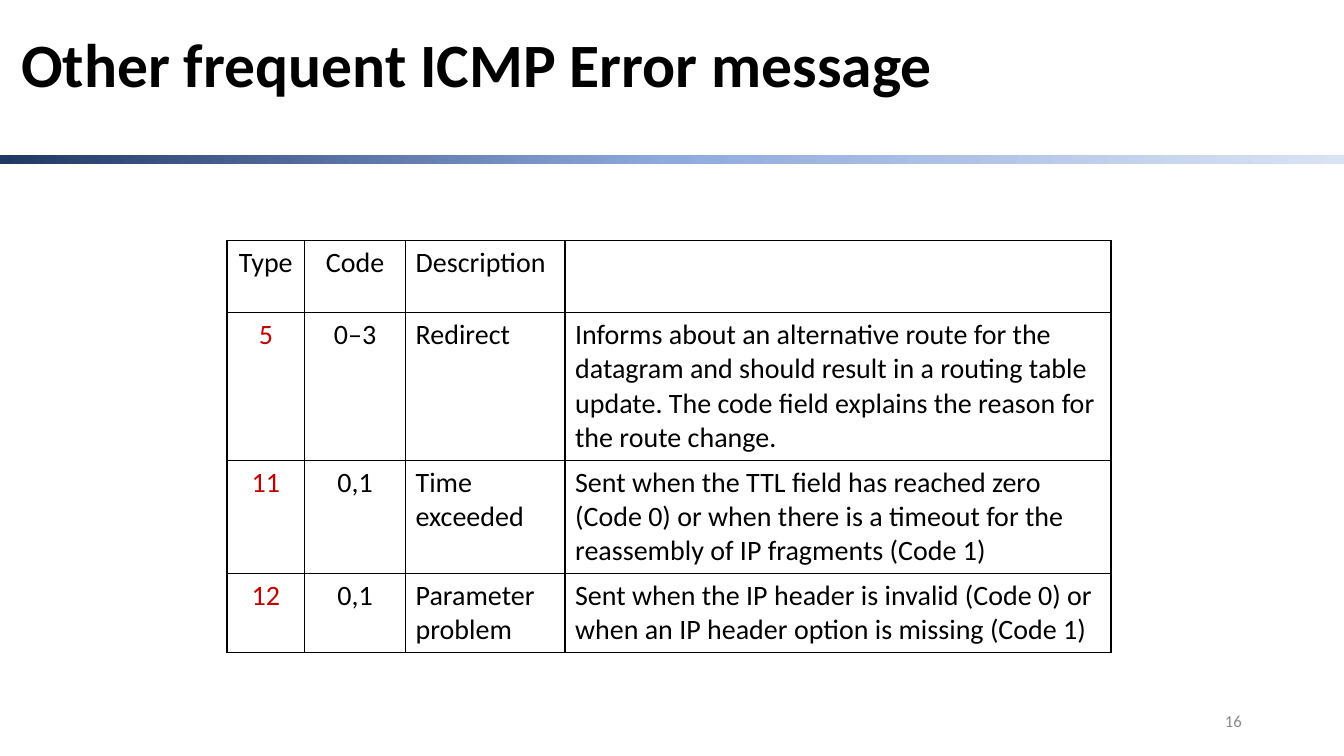
from copy import deepcopy

from lxml import etree
from pptx import Presentation, util as u
from pptx.dml.color import RGBColor
from pptx.enum import shapes, text
from pptx.oxml import ns

COLORS = {
    "ink": "000000", "type": "C00000", "number": "8C8C8C",
    "navy": "203864", "blue": "8FAADC", "pale": "DAE3F3",
}
CENTER, LEFT, RIGHT = text.PP_ALIGN.CENTER, text.PP_ALIGN.LEFT, text.PP_ALIGN.RIGHT

COLUMN_WIDTHS = [1.96, 2.54, 4.02, 13.76]
ROW_HEIGHTS = [1.82, 3.72, 2.85, 1.98]
MESSAGES = [
    ("Type", "Code", "Description", ""),
    ("5", "0–3", "Redirect",
     "Informs about an alternative route for the datagram and should result in a "
     "routing table update. The code field explains the reason for the route change."),
    ("11", "0,1", "Time exceeded",
     "Sent when the TTL field has reached zero (Code 0) or when there is a timeout "
     "for the reassembly of IP fragments (Code 1)"),
    ("12", "0,1", "Parameter\nproblem",
     "Sent when the IP header is invalid (Code 0) or when an IP header option is "
     "missing (Code 1)"),
]


class SlideBuilder:
    font = "Calibri"

    def __init__(self, deck):
        self.page = deck.slides.add_slide(deck.slide_layouts[5])

    def set_text(self, para, words, size, color="ink", align=LEFT, bold=False):
        para.text = words
        para.alignment = align
        for span in para.runs:
            span.font.name = self.font
            span.font.size = u.Pt(size)
            span.font.bold = bold
            span.font.color.rgb = RGBColor.from_string(COLORS[color])

    def title(self, words, left, top, width, height):
        box = self.page.shapes.title
        box.left, box.top = u.Cm(left), u.Cm(top)
        box.width, box.height = u.Cm(width), u.Cm(height)
        box.text_frame.vertical_anchor = text.MSO_ANCHOR.MIDDLE
        para = box.text_frame.paragraphs[0]
        self.set_text(para, words, 44, bold=True)
        para.line_spacing = 0.9

    def label(self, words, size, color, align, *area):
        box = self.page.shapes.add_textbox(*map(u.Cm, area))
        box.text_frame.word_wrap = True
        box.text_frame.vertical_anchor = text.MSO_ANCHOR.MIDDLE
        self.set_text(box.text_frame.paragraphs[0], words, size, color, align)

    def gradient_bar(self, colors, *area):
        bar = self.page.shapes.add_shape(
            shapes.MSO_SHAPE.RECTANGLE, *map(u.Cm, area))
        bar.shadow.inherit = False
        bar.line.fill.background()
        bar.fill.gradient()
        bar.fill.gradient_angle = 0
        # A new gradient has two stops; extend it to one per colour
        stop_list = bar._element.spPr.find(".//" + ns.qn("a:gsLst"))
        while len(stop_list) < len(colors):
            stop_list.append(deepcopy(stop_list[0]))
        for index, (stop, color) in enumerate(zip(bar.fill.gradient_stops, colors)):
            stop.color.rgb = RGBColor.from_string(COLORS[color])
            stop.position = index / (len(colors) - 1)

    def border(self, cell):
        properties = cell._tc.get_or_add_tcPr()
        for side in ("lnL", "lnR", "lnT", "lnB"):
            line = etree.SubElement(properties, ns.qn("a:" + side), w=str(u.Pt(1)))
            fill = etree.SubElement(line, ns.qn("a:solidFill"))
            etree.SubElement(fill, ns.qn("a:srgbClr"), val=COLORS["ink"])

    def table(self, rows, widths, heights, left, top):
        frame = self.page.shapes.add_table(
            len(rows), len(widths), u.Cm(left), u.Cm(top),
            u.Cm(sum(widths)), u.Cm(sum(heights)))
        grid = frame.table
        grid.first_row = grid.horz_banding = False
        for column, width in zip(grid.columns, widths):
            column.width = u.Cm(width)
        for r, (row, height) in enumerate(zip(rows, heights)):
            grid.rows[r].height = u.Cm(height)
            for c, words in enumerate(row):
                cell = grid.cell(r, c)
                self.border(cell)
                cell.fill.background()
                self.set_text(cell.text_frame.paragraphs[0], words, 20,
                              "type" if r and c == 0 else "ink",
                              CENTER if c < 2 else LEFT)


def main():
    deck = Presentation()
    deck.slide_width, deck.slide_height = u.Cm(33.87), u.Cm(19.05)
    slide = SlideBuilder(deck)

    # Heading and divider
    slide.gradient_bar(["navy", "blue", "pale"], 0, 3.91, 33.87, 0.23)
    slide.title("Other frequent ICMP Error message", 0.28, 0.43, 33.3, 2.54)

    # Error messages
    slide.table(MESSAGES, COLUMN_WIDTHS, ROW_HEIGHTS, 5.72, 6.06)

    # Slide number
    slide.label("16", 12, "number", RIGHT, 23.93, 17.65, 7.62, 1.02)

    deck.save("out.pptx")


if __name__ == "__main__":
    main()
